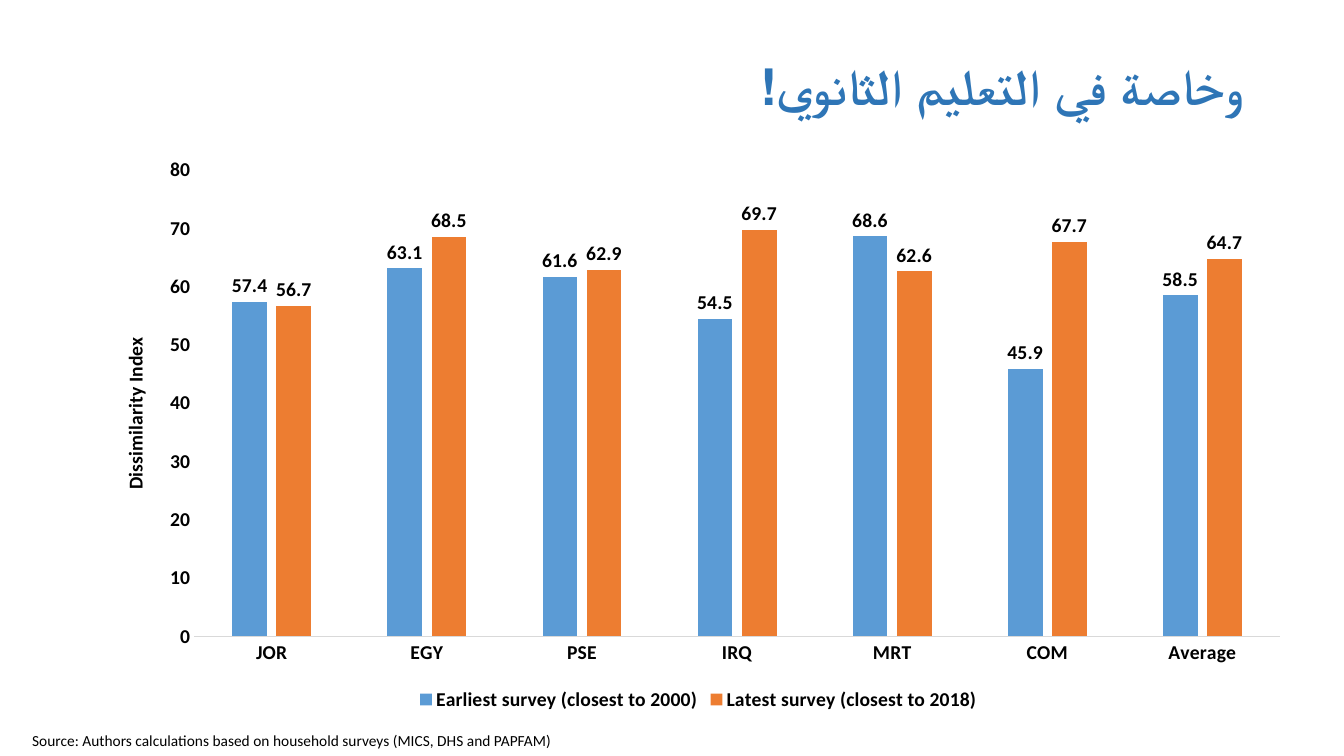
import pptx
import pptx.chart.data
import pptx.dml.color
import pptx.enum.chart
import pptx.enum.text
import pptx.oxml
import pptx.oxml.ns
import pptx.util

Pt = pptx.util.Pt
ENUM = pptx.enum.chart
TEXT = pptx.enum.text

COLORS = {
    "title": "2E75B6",
    "text": "000000",
    "early": "5B9BD5",
    "late": "ED7D31",
    "line": "D9D9D9",
}
CHART = (66.24, 105.12, 865.44, 406.08)
BOLD = {"name": "Calibri", "size": Pt(14), "bold": True}
CATS = ["JOR", "EGY", "PSE", "IRQ", "MRT", "COM", "Average"]
SERIES = [
    ("Earliest survey (closest to 2000)", "early",
     [57.4, 63.1, 61.6, 54.5, 68.6, 45.9, 58.5]),
    ("Latest survey (closest to 2018)", "late",
     [56.7, 68.5, 62.9, 69.7, 62.6, 67.7, 64.7]),
]


def apply(item, values):
    for name, value in values.items():
        setattr(item, name, value)


def paint(color, key):
    color.rgb = pptx.dml.color.RGBColor.from_string(COLORS[key])


def style(font, values, key="text"):
    apply(font, values)
    paint(font.color, key)


def add_text(slide, box, text, font, key, wrap):
    frame = slide.shapes.add_textbox(*map(Pt, box)).text_frame
    apply(frame, {"word_wrap": wrap, "vertical_anchor": TEXT.MSO_ANCHOR.MIDDLE})
    par = frame.paragraphs[0]
    run = par.add_run()
    run.text = text
    style(run.font, font, key)
    return par


def place(parent, index, target, **sizes):
    for old in parent.findall(pptx.oxml.ns.qn("c:layout")):
        parent.remove(old)
    inner = '<c:layoutTarget val="inner"/>' if target else ""
    modes = "".join(f'<c:{axis}Mode val="edge"/>' for axis in "xy")
    spans = {"x": CHART[2], "y": CHART[3], "w": CHART[2], "h": CHART[3]}
    parts = "".join(f'<c:{name} val="{size / spans[name]:.4f}"/>'
                    for name, size in sizes.items())
    parent.insert(index, pptx.oxml.parse_xml(
        f'<c:layout {pptx.oxml.ns.nsdecls("c")}><c:manualLayout>'
        f'{inner}{modes}{parts}</c:manualLayout></c:layout>'))


def style_axes(chart):
    marks = {
        "has_major_gridlines": False,
        "major_tick_mark": ENUM.XL_TICK_MARK.NONE,
        "minor_tick_mark": ENUM.XL_TICK_MARK.NONE,
    }
    for axis in (chart.category_axis, chart.value_axis):
        apply(axis, marks)
        style(axis.tick_labels.font, BOLD)
    line = chart.category_axis.format.line
    line.width = Pt(0.75)
    paint(line.color, "line")
    scale = chart.value_axis
    apply(scale, {"minimum_scale": 0, "maximum_scale": 80, "major_unit": 10})
    apply(scale.tick_labels, {"number_format": "0", "number_format_is_linked": False})
    scale.format.line.fill.background()
    title = scale.axis_title
    title.text_frame.text = "Dissimilarity Index"
    style(title.text_frame.paragraphs[0].runs[0].font, BOLD)
    place(title._element, 1, False, x=18, y=133)


def style_bars(plot):
    apply(plot, {"gap_width": 219, "overlap": -27, "vary_by_categories": False})
    for bars, (_, key, _) in zip(plot.series, SERIES):
        bars.format.fill.solid()
        paint(bars.format.fill.fore_color, key)
        labels = bars.data_labels
        apply(labels, {
            "show_value": True,
            "number_format": "#,##0.0",
            "number_format_is_linked": False,
            "position": ENUM.XL_LABEL_POSITION.OUTSIDE_END,
        })
        style(labels.font, BOLD)


def add_chart(slide):
    data = pptx.chart.data.CategoryChartData()
    data.categories = CATS
    for name, _, values in SERIES:
        data.add_series(name, values)
    chart = slide.shapes.add_chart(
        ENUM.XL_CHART_TYPE.COLUMN_CLUSTERED, *map(Pt, CHART), data).chart
    apply(chart, {"has_title": False, "has_legend": True})
    style(chart.font, BOLD)
    apply(chart.legend, {
        "position": ENUM.XL_LEGEND_POSITION.BOTTOM,
        "include_in_layout": False,
    })
    style(chart.legend.font, BOLD)
    style_axes(chart)
    style_bars(chart.plots[0])
    area = chart._chartSpace.chart.plotArea
    place(area, 0, True, x=72.5, y=16.3, w=775.5, h=333.2)


def main():
    deck = pptx.Presentation()
    apply(deck, {"slide_width": Pt(960), "slide_height": Pt(540)})
    slide = deck.slides.add_slide(deck.slide_layouts[6])
    title = add_text(slide, (28.8, 11.52, 865.44, 104.4),
                     "وخاصة في التعليم الثانوي!",
                     {"name": "Calibri", "size": Pt(36), "bold": True},
                     "title", True)
    apply(title, {"alignment": TEXT.PP_ALIGN.RIGHT, "line_spacing": 0.9})
    title._p.get_or_add_pPr().set("rtl", "1")
    add_chart(slide)
    add_text(slide, (15.84, 518.4, 388.8, 20.88),
             "Source: Authors calculations based on household surveys "
             "(MICS, DHS and PAPFAM)",
             {"name": "Calibri", "size": Pt(11)}, "text", False)
    deck.save("out.pptx")


if __name__ == "__main__":
    main()
